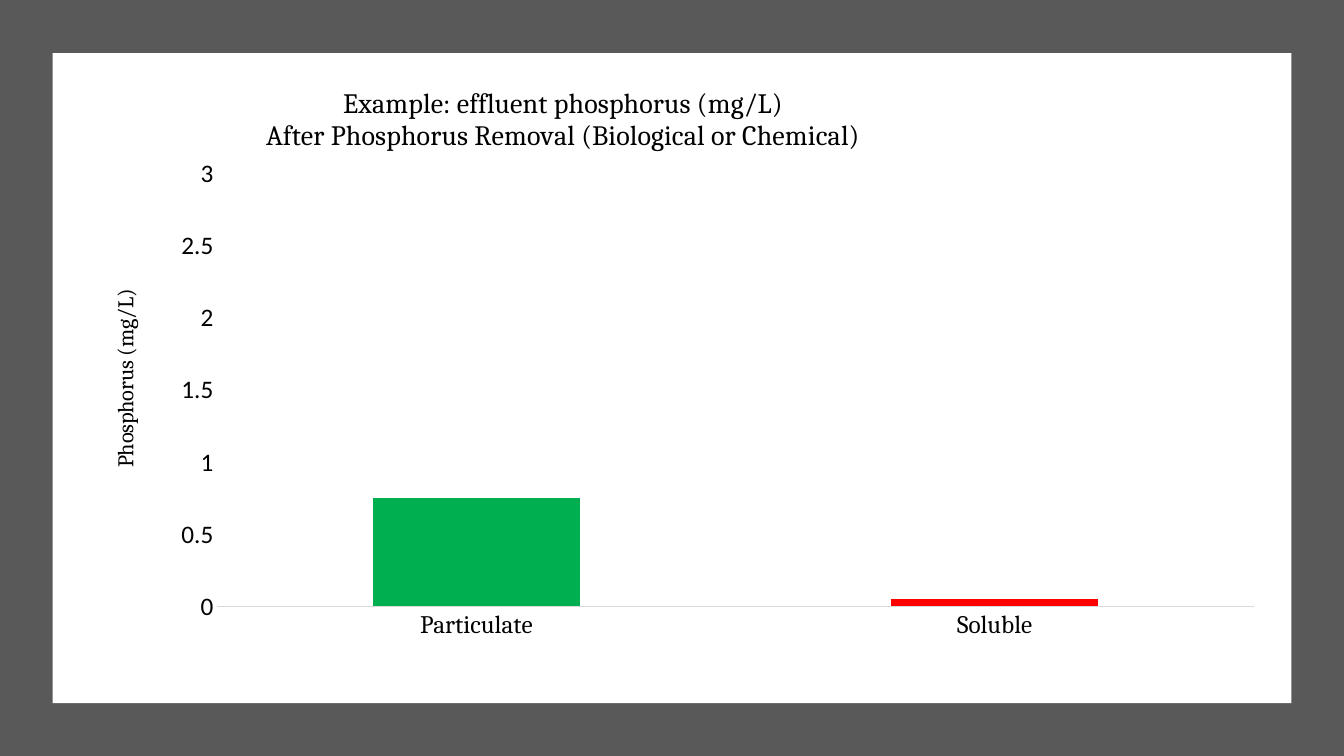
from dataclasses import dataclass

from lxml import etree
from pptx import Presentation
from pptx.chart.data import CategoryChartData
from pptx.dml.color import RGBColor
from pptx.enum import chart as kinds, shapes
from pptx.oxml.ns import qn
from pptx.util import Pt


@dataclass(frozen=True)
class Theme:
    frame: str = "595959"
    panel: str = "FFFFFF"
    ink: str = "000000"
    axis_line: str = "D9D9D9"
    particulate: str = "00B050"
    soluble: str = "FF0000"
    serif: str = "Cambria"
    sans: str = "Calibri"
    title_size: int = 20
    label_size: int = 18
    axis_title_size: int = 16
    base_size: int = 10


theme = Theme()


def style_font(font, name, size):
    font.name = name
    font.size = Pt(size)
    font.bold = False
    font.color.rgb = RGBColor.from_string(theme.ink)


def set_layout(parent, index, **fractions):
    """Give a chart part a manual layout in fractions of the chart."""
    old_layout = parent.find(qn("c:layout"))
    if old_layout is not None:
        parent.remove(old_layout)
    layout = etree.Element(qn("c:layout"))
    manual = etree.SubElement(layout, qn("c:manualLayout"))
    if "w" in fractions:
        etree.SubElement(manual, qn("c:layoutTarget")).set("val", "inner")
    for mode in ("xMode", "yMode"):
        etree.SubElement(manual, qn(f"c:{mode}")).set("val", "edge")
    for side, value in fractions.items():
        etree.SubElement(manual, qn(f"c:{side}")).set("val", str(value))
    parent.insert(index, layout)


deck = Presentation()
deck.slide_width, deck.slide_height = Pt(960), Pt(540)
page = deck.slides.add_slide(deck.slide_layouts[6])

# Dark frame with a white panel on it
for bounds, color in (
    ((0, 0, 960, 540), theme.frame),
    ((37.5, 38, 885, 464.3), theme.panel),
):
    box = page.shapes.add_shape(shapes.MSO_SHAPE.RECTANGLE, *map(Pt, bounds))
    box.shadow.inherit = False
    box.fill.solid()
    box.fill.fore_color.rgb = RGBColor.from_string(color)
    box.line.fill.background()

# Stacked column chart
data = CategoryChartData()
data.categories = ["Particulate", "Soluble"]
data.add_series("Series 1", [0.75, 0.05])
chart = page.shapes.add_chart(
    kinds.XL_CHART_TYPE.COLUMN_STACKED, Pt(50.4), Pt(50.4), Pt(859), Pt(438.5), data
).chart
style_font(chart.font, theme.sans, theme.base_size)
chart.has_legend = False

plot = chart.plots[0]
plot.gap_width, plot.overlap = 150, 100
plot.vary_by_categories = False
series = plot.series[0]
series.format.fill.solid()
series.format.fill.fore_color.rgb = RGBColor.from_string(theme.particulate)
for index, color in enumerate((theme.particulate, theme.soluble)):
    fill = series.points[index].format.fill
    fill.solid()
    fill.fore_color.rgb = RGBColor.from_string(color)

# Axes
categories, values = chart.category_axis, chart.value_axis
for axis, font_name in ((categories, theme.serif), (values, theme.sans)):
    axis.has_major_gridlines = False
    axis.major_tick_mark = axis.minor_tick_mark = kinds.XL_TICK_MARK.NONE
    style_font(axis.tick_labels.font, font_name, theme.label_size)
categories.format.line.color.rgb = RGBColor.from_string(theme.axis_line)
categories.format.line.width = Pt(0.75)
values.format.line.fill.background()
values.minimum_scale, values.maximum_scale, values.major_unit = 0, 3, 0.5

# Chart title and value axis title
chart.has_title = values.has_title = True
for title, lines, size, left, top in (
    (
        chart.chart_title,
        ("Example: effluent phosphorus (mg/L)",
         "After Phosphorus Removal (Biological or Chemical)"),
        theme.title_size, 0.16, 0.02,
    ),
    (values.axis_title, ("Phosphorus (mg/L)",), theme.axis_title_size, 0.03, 0.35),
):
    frame = title.text_frame
    for number, line in enumerate(lines):
        para = frame.add_paragraph() if number else frame.paragraphs[0]
        style_font(para.font, theme.serif, size)
        span = para.add_run()
        span.text = line
        style_font(span.font, theme.serif, size)
    set_layout(title.element, 1, x=left, y=top)

turned = values.axis_title.element.find(".//" + qn("a:bodyPr"))
turned.set("rot", "-5400000")
turned.set("vert", "horz")

plot_area = chart.element.find(".//" + qn("c:plotArea"))
set_layout(plot_area, 0, x=0.122, y=0.168, w=0.862, h=0.705)

deck.save("out.pptx")
